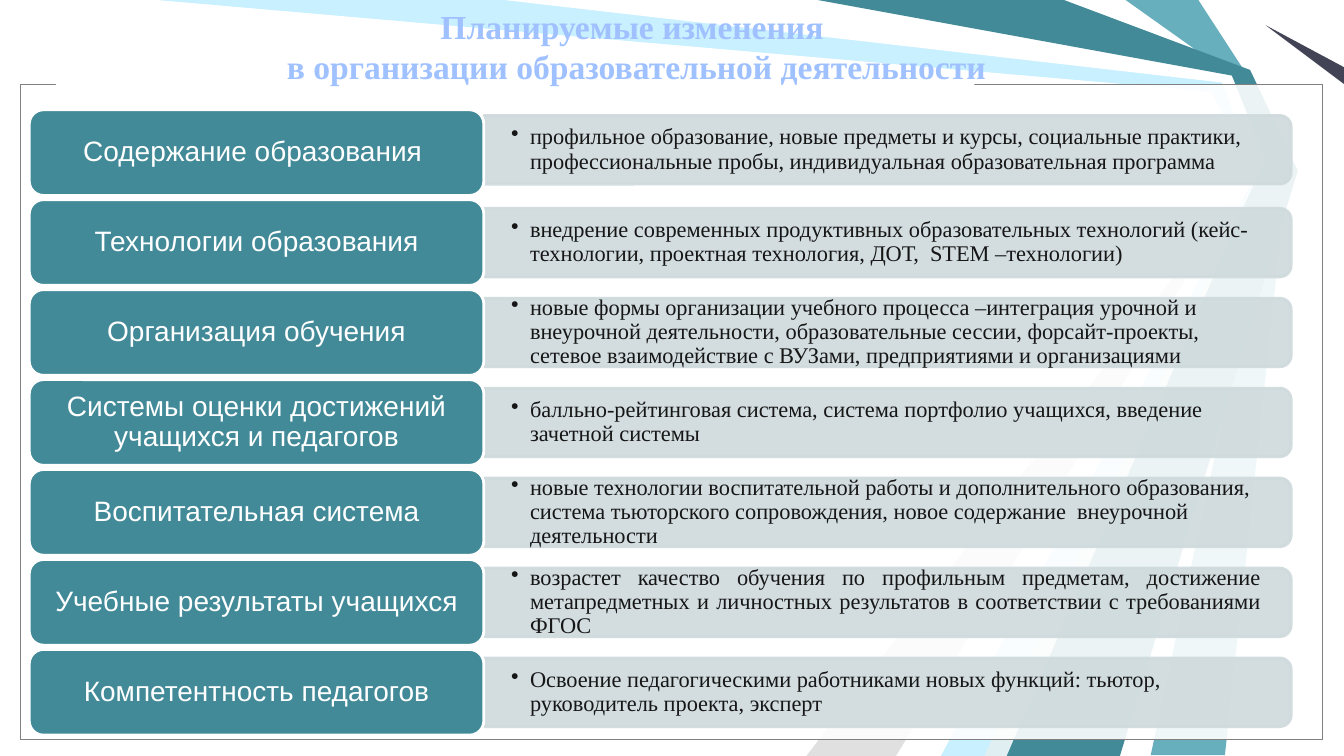
from lxml.etree import SubElement
from pptx import Presentation
from pptx.dml.color import RGBColor
from pptx.enum.shapes import MSO_SHAPE
from pptx.enum.text import MSO_ANCHOR, PP_ALIGN
from pptx.oxml.ns import qn
from pptx.util import Pt

# Colours
WHITE = RGBColor(0xFF, 0xFF, 0xFF)
TEAL = RGBColor(0x42, 0x8A, 0x98)
AQUA = RGBColor(0x67, 0xAF, 0xBD)
SKY = RGBColor(0xC9, 0xF0, 0xFF)
SILVER = RGBColor(0xE0, 0xE0, 0xE0)
MIST = RGBColor(0xE0, 0xEF, 0xF1)
NAVY = RGBColor(0x42, 0x44, 0x56)
BLUE = RGBColor(0x00, 0x84, 0xB4)
GREY = RGBColor(0x80, 0x80, 0x80)
BAR = RGBColor(0xCF, 0xDA, 0xDD)
INK = RGBColor(0x16, 0x16, 0x16)
TITLE = RGBColor(0xA0, 0xC1, 0xFF)

# Content
HEAD = ["Планируемые изменения ", "в организации образовательной деятельности"]
LEFT, JUST = PP_ALIGN.LEFT, PP_ALIGN.JUSTIFY
ROWS = [
    ("Содержание образования ", LEFT,
     "профильное образование, новые предметы и курсы, социальные практики, "
     "профессиональные пробы, индивидуальная образовательная программа"),
    ("Технологии образования", LEFT,
     "внедрение современных продуктивных образовательных технологий (кейс- "
     "технологии, проектная технология, ДОТ,  STEM –технологии)"),
    ("Организация обучения", LEFT,
     "новые формы организации учебного процесса –интеграция урочной и "
     "внеурочной деятельности, образовательные сессии, форсайт-проекты, "
     "сетевое взаимодействие с ВУЗами, предприятиями и организациями"),
    ("Системы оценки достижений учащихся и педагогов", LEFT,
     "балльно-рейтинговая система, система портфолио учащихся, введение "
     "зачетной системы"),
    ("Воспитательная система", LEFT,
     "новые технологии воспитательной работы и дополнительного образования, "
     "система тьюторского сопровождения, новое содержание  внеурочной "
     "деятельности"),
    ("Учебные результаты учащихся", JUST,
     "возрастет качество обучения по профильным предметам, достижение "
     "метапредметных и личностных результатов в соответствии с требованиями "
     "ФГОС "),
    ("Компетентность педагогов", LEFT,
     "Освоение педагогическими работниками новых функций: тьютор, "
     "руководитель проекта, эксперт"),
]

# Background ribbons, back to front
RIBBONS = [
    (AQUA, [(856, 0), (892, 55.4), (920, 120), (875, 539.5), (822, 539.5),
            (912, 120), (880, 54), (804, 0)]),
    (SKY, [(112, 0), (368, 0), (877, 56), (904, 122), (712, 540), (664, 540),
           (897, 125), (865, 65.5)]),
    (SILVER, [(640, 540), (890, 130), (576, 540)]),
    (WHITE, [(360, 0), (873, 59), (895, 117), (648, 540), (672, 540),
             (903, 114), (880, 54), (576, 0)]),
    (WHITE, [(888, 0), (880, 12), (939, 86), (960, 90), (960, 72), (888, 12),
             (895, 0)]),
    (NAVY, [(960, 60), (904, 18), (960, 48)]),
    (TEAL, [(584, 0), (760, 0), (893, 50), (927, 122), (800, 540), (704, 540),
            (904, 114), (880, 54)]),
    (MIST, [(703, 540), (895, 132), (719, 540)]),
]

# Row layout
TOP, STEP, TALL = 78.4, 64.25, 61.2
TAG_X, TAG_W = 20.9, 324.7
BAR_X, BAR_W, BAR_H = 345.6, 576.7, 49
TEXT_W, TEXT_H = 574.6, 43.9

deck = Presentation()
deck.slide_width, deck.slide_height = Pt(960), Pt(540)
slide = deck.slides.add_slide(deck.slide_layouts[6])
shapes = slide.shapes


def fade(owner, alpha):
    node = owner.find(qn("a:solidFill")).find(qn("a:srgbClr"))
    SubElement(node, qn("a:alpha"), val=str(alpha * 1000))


def paint(shape, fill, line=None, width=0):
    shape.shadow.inherit = False
    shape.fill.solid()
    shape.fill.fore_color.rgb = fill
    if line is None:
        shape.line.fill.background()
    else:
        shape.line.color.rgb = line
        shape.line.width = Pt(width)


def block(kind, x, y, w, h, *look):
    shape = shapes.add_shape(kind, Pt(x), Pt(y), Pt(w), Pt(h))
    paint(shape, *look)
    return shape


def frame(shape, side, edge):
    text = shape.text_frame
    text.word_wrap = True
    text.vertical_anchor = MSO_ANCHOR.MIDDLE
    text.margin_left = text.margin_right = Pt(side)
    text.margin_top = text.margin_bottom = Pt(edge)
    return text


def style(para, words, name, size, color, align, bold=False):
    para.text = words
    para.alignment = align
    font = para.font
    font.name, font.size, font.bold = name, Pt(size), bold
    font.color.rgb = color


# Background
for color, dots in RIBBONS:
    (x, y), *rest = [(Pt(a), Pt(b)) for a, b in dots]
    ribbon = shapes.build_freeform(x, y)
    ribbon.add_line_segments(rest, close=True)
    paint(ribbon.convert_to_shape(), color)

# Panel, and the gap in its top edge
for edge in (BLUE, GREY):
    panel = block(MSO_SHAPE.RECTANGLE, 15, 60.3, 930, 468, WHITE, edge, 0.75)
    fade(panel._element.spPr, 69)
block(MSO_SHAPE.RECTANGLE, 40, 53.5, 656, 12, WHITE)

# Rows
for i, (label, align, words) in enumerate(ROWS):
    top = TOP + i * STEP
    mid = top + TALL / 2 - (2 if i == 0 else 0)

    # Bar: a tall shape turned a quarter to the right
    bar = block(MSO_SHAPE.ROUND_2_SAME_RECTANGLE,
                BAR_X + (BAR_W - BAR_H) / 2, mid - BAR_W / 2, BAR_H, BAR_W,
                BAR, BAR, 2)
    bar.rotation = 90
    props = bar._element.spPr
    for owner in (props, props.find(qn("a:ln"))):
        fade(owner, 90)

    box = shapes.add_textbox(Pt(BAR_X), Pt(mid - TEXT_H / 2),
                             Pt(TEXT_W), Pt(TEXT_H))
    para = frame(box, 19.5, 10).paragraphs[0]
    props = para._p.get_or_add_pPr()
    props.set("marL", str(Pt(13.5)))
    props.set("indent", str(-Pt(13.5)))
    SubElement(props, qn("a:buChar"), char="•")
    para.line_spacing = 0.9
    style(para, words, "Times New Roman", 16, INK, align)

    tag = block(MSO_SHAPE.ROUNDED_RECTANGLE, TAG_X, top, TAG_W, TALL,
                TEAL, WHITE, 2)
    para = frame(tag, 4, 3).paragraphs[0]
    para.line_spacing = 0.9
    style(para, label, "Arial", 20, WHITE, PP_ALIGN.CENTER)

# Title
box = shapes.add_textbox(Pt(140), Pt(0), Pt(629), Pt(65.5))
text = frame(box, 7.2, 3.6)
for i, words in enumerate(HEAD):
    para = text.add_paragraph() if i else text.paragraphs[0]
    style(para, words, "Times New Roman", 24, TITLE, PP_ALIGN.CENTER, True)

deck.save("out.pptx")
